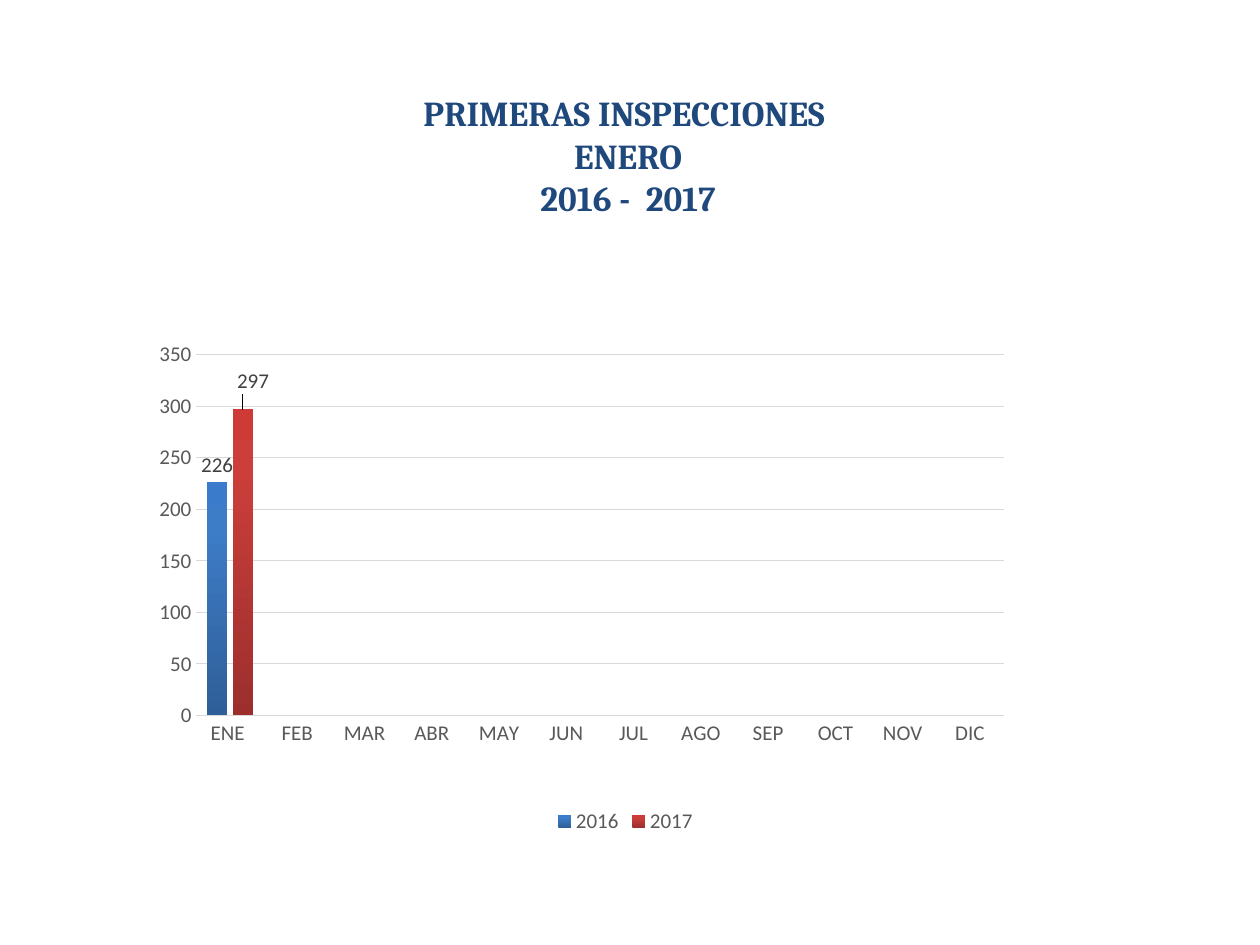
"""Build a slide comparing first inspections in January 2016 and 2017."""
from pptx import Presentation
from pptx.chart.data import CategoryChartData
from pptx.dml.color import RGBColor
from pptx.enum.chart import XL_CHART_TYPE as ChartType, XL_LABEL_POSITION as LabelPosition
from pptx.enum.chart import XL_LEGEND_POSITION as LegendPosition, XL_TICK_MARK as TickMark
from pptx.enum.text import MSO_ANCHOR as Anchor, PP_ALIGN as Align
from pptx.oxml import parse_xml
from pptx.oxml.ns import nsdecls, qn
from pptx.util import Inches, Pt


def style(font, color, size=12, name="Calibri", bold=False):
    font.name, font.size, font.bold = name, Pt(size), bold
    font.color.rgb = RGBColor.from_string(color)


def add_layout(parent, position, **settings):
    for old in parent.findall(qn("c:layout")):
        parent.remove(old)
    items = "".join(f'<c:{key} val="{value}"/>' for key, value in settings.items())
    parent.insert(position, parse_xml(
        f'<c:layout {nsdecls("c")}><c:manualLayout>{items}</c:manualLayout></c:layout>'))


deck = Presentation()
deck.slide_width, deck.slide_height = Inches(10), Inches(7.5)
page = deck.slides.add_slide(deck.slide_layouts[5])

title = page.shapes.title
title.left, title.top, title.width, title.height = map(Inches, (2.72, 0.68, 4.53, 1.11))
frame = title.text_frame
frame.word_wrap, frame.vertical_anchor = True, Anchor.TOP
for index, line in enumerate(["PRIMERAS INSPECCIONES ", "ENERO", "2016 -  2017"]):
    para = frame.add_paragraph() if index else frame.paragraphs[0]
    para.alignment, para.space_before = Align.CENTER, Pt(0)
    span = para.add_run()
    span.text = line
    style(span.font, "1F497D", 20, "Cambria", True)

months = ["ENE ", "FEB", "MAR", "ABR", "MAY", "JUN", "JUL", "AGO", "SEP", "OCT", "NOV", "DIC"]
january = {"2016": 226, "2017": 297}
gradients = [
    {0: "2F5F99", 80: "3D7CC7", 100: "3A7CCB"},
    {0: "9C2F2D", 80: "CB3E3A", 100: "CE3B37"},
]
data = CategoryChartData()
data.categories = months
for year, count in january.items():
    data.add_series(year, [count] + [None] * (len(months) - 1))
chart = page.shapes.add_chart(
    ChartType.COLUMN_CLUSTERED, *map(Inches, (0.91, 2.57, 8.11, 4.09)), data).chart
style(chart.font, "000000", 10)
chart.has_title = False
chart.has_legend = True
chart.legend.position = LegendPosition.BOTTOM
chart.legend.include_in_layout = False
style(chart.legend.font, "595959")

for axis in (chart.category_axis, chart.value_axis):
    axis.major_tick_mark = axis.minor_tick_mark = TickMark.NONE
    style(axis.tick_labels.font, "595959")
chart.value_axis.format.line.fill.background()
chart.value_axis.has_major_gridlines = True
grid = chart.value_axis.major_gridlines
for line, width in ((chart.category_axis.format.line, 1), (grid.format.line, 0.75)):
    line.color.rgb = RGBColor.from_string("D9D9D9")
    line.width = Pt(width)

plot = chart.plots[0]
plot.gap_width, plot.overlap, plot.vary_by_categories = 100, -24, False
add_layout(chart._chartSpace.chart.plotArea, 0, layoutTarget="inner", xMode="edge",
           yMode="edge", x=0.08, y=0.06, w=0.79, h=0.7)

for series, stops in zip(plot.series, gradients):
    fill = series.format.fill
    fill.gradient()
    fill.gradient_angle = 90
    stop_list = fill._fill._gradFill.find(qn("a:gsLst"))
    for old in list(stop_list):
        stop_list.remove(old)
    for share, color in stops.items():
        stop_list.append(parse_xml(
            f'<a:gs {nsdecls("a")} pos="{share * 1000}"><a:srgbClr val="{color}"/></a:gs>'))
    labels = series.data_labels
    labels.show_value, labels.position = True, LabelPosition.OUTSIDE_END
    style(labels.font, "404040")

moved = plot.series[1].points[0].data_label
style(moved.font, "404040")
moved.position = LabelPosition.OUTSIDE_END
add_layout(plot.series[1].data_labels._element.find(qn("c:dLbl")), 1, x=0.01, y=-0.02)

deck.save("out.pptx")
